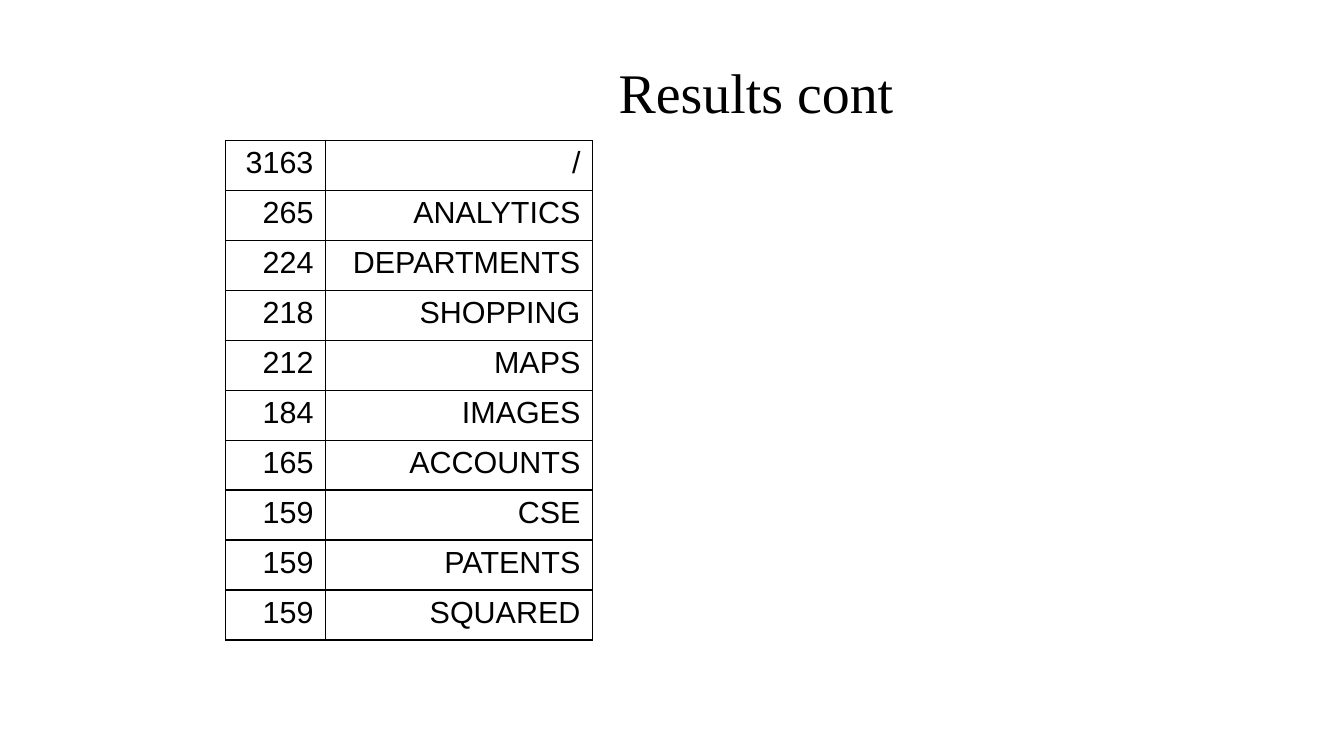
from dataclasses import dataclass

from lxml import etree
from pptx import Presentation
from pptx import util as u
from pptx.dml.color import RGBColor
from pptx.enum import text
from pptx.oxml import ns


@dataclass(frozen=True)
class Theme:
    ink: str = "000000"
    paper: str = "FFFFFF"
    title_font: str = "Times New Roman"
    title_size: int = 33
    cell_font: str = "Arial"
    cell_size: int = 18
    border: float = 0.75


THEME = Theme()

RESULTS = [
    ("3163", "/"),
    ("265", "ANALYTICS"),
    ("224", "DEPARTMENTS"),
    ("218", "SHOPPING"),
    ("212", "MAPS"),
    ("184", "IMAGES"),
    ("165", "ACCOUNTS"),
    ("159", "CSE"),
    ("159", "PATENTS"),
    ("159", "SQUARED"),
]
COLUMN_WIDTHS = (0.82, 2.19)
ROW_HEIGHT = 0.41


def set_attrs(obj, values):
    for name, value in values.items():
        setattr(obj, name, value)


def write(tf, content, font, size, align):
    """Put one formatted paragraph in a text frame."""
    p = tf.paragraphs[0]
    p.alignment = align
    r = p.add_run()
    r.text = content
    set_attrs(r.font, {"name": font, "size": u.Pt(size), "bold": False})
    r.font.color.rgb = RGBColor.from_string(THEME.ink)


def add_title(s, content, left, top, width, height):
    sp = s.shapes.title
    set_attrs(sp, {"left": u.Inches(left), "top": u.Inches(top),
                   "width": u.Inches(width), "height": u.Inches(height)})
    tf = sp.text_frame
    set_attrs(tf, {"margin_left": 0, "margin_right": 0, "margin_top": 0,
                   "margin_bottom": 0, "word_wrap": True,
                   "auto_size": text.MSO_AUTO_SIZE.NONE,
                   "vertical_anchor": text.MSO_ANCHOR.MIDDLE})
    write(tf, content, THEME.title_font, THEME.title_size, text.PP_ALIGN.CENTER)


def add_borders(cell):
    """Draw a thin line on all four sides; lines go before the cell fill."""
    tc_pr = cell._tc.get_or_add_tcPr()
    for i, side in enumerate(("lnL", "lnR", "lnT", "lnB")):
        ln = etree.Element(ns.qn(f"a:{side}"), w=str(u.Pt(THEME.border)))
        fill = etree.SubElement(ln, ns.qn("a:solidFill"))
        etree.SubElement(fill, ns.qn("a:srgbClr"), val=THEME.ink)
        tc_pr.insert(i, ln)


def add_results_table(s, rows, left, top):
    frame = s.shapes.add_table(
        len(rows), len(COLUMN_WIDTHS), u.Inches(left), u.Inches(top),
        u.Inches(sum(COLUMN_WIDTHS)), u.Inches(ROW_HEIGHT * len(rows)))
    table = frame.table
    set_attrs(table, {"first_row": False, "horz_banding": False})
    for column, width in zip(table.columns, COLUMN_WIDTHS):
        column.width = u.Inches(width)
    for i, values in enumerate(rows):
        table.rows[i].height = u.Inches(ROW_HEIGHT)
        for j, value in enumerate(values):
            cell = table.cell(i, j)
            cell.fill.solid()
            cell.fill.fore_color.rgb = RGBColor.from_string(THEME.paper)
            add_borders(cell)
            write(cell.text_frame, value, THEME.cell_font, THEME.cell_size,
                  text.PP_ALIGN.RIGHT)


def main():
    prs = Presentation()
    set_attrs(prs, {"slide_width": u.Inches(11.02),
                    "slide_height": u.Inches(6.2)})
    s = prs.slides.add_slide(prs.slide_layouts.get_by_name("Title Only"))

    # Heading
    add_title(s, "Results cont", 1.77, 0.24, 8.86, 1.02)

    # Counts by name
    add_results_table(s, RESULTS, 1.85, 1.15)

    prs.save("out.pptx")


if __name__ == "__main__":
    main()
